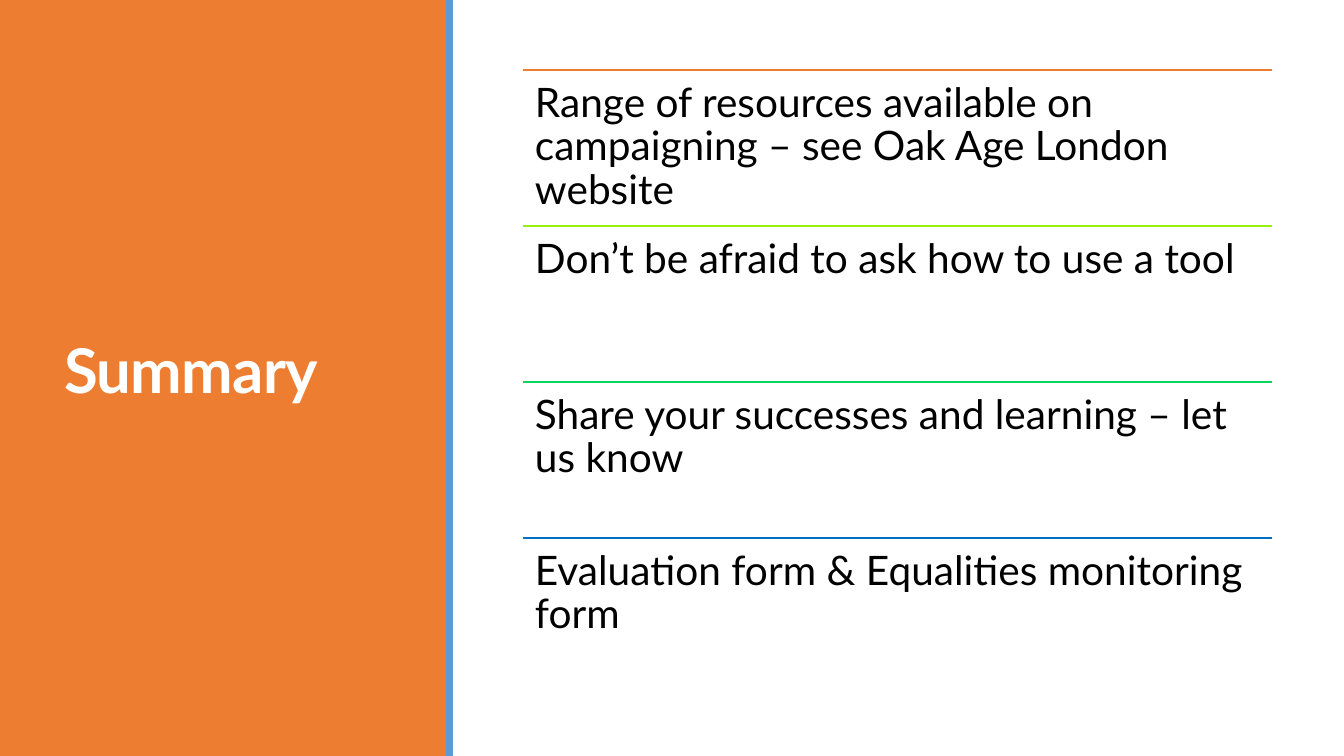
from dataclasses import dataclass

from pptx import Presentation
from pptx.dml.color import RGBColor
from pptx.enum.shapes import MSO_CONNECTOR, MSO_SHAPE
from pptx.enum.text import MSO_ANCHOR, MSO_AUTO_SIZE, PP_ALIGN
from pptx.oxml.ns import qn
from pptx.util import Pt

RECT = MSO_SHAPE.RECTANGLE
STRAIGHT = MSO_CONNECTOR.STRAIGHT
MIDDLE, TOP = MSO_ANCHOR.MIDDLE, MSO_ANCHOR.TOP
LEFT = PP_ALIGN.LEFT
NO_FIT = MSO_AUTO_SIZE.NONE

TITLE = "Summary"
POINTS = [
    ("Range of resources available on campaigning – see Oak Age London website", "ED7D31"),
    ("Don’t be afraid to ask how to use a tool", "94F10E"),
    ("Share your successes and learning – let us know", "06D95D"),
    ("Evaluation form & Equalities monitoring form", "0070C0"),
]


@dataclass(frozen=True)
class Theme:
    font: str = "Lato"
    panel: str = "ED7D31"
    stripe: str = "5B9BD5"
    title: str = "FFFFFF"
    text: str = "000000"
    title_size: int = 44
    text_size: int = 29
    rule_width: float = 1.25


THEME = Theme()
SLIDE_W, SLIDE_H = 1344, 756
LIST_X, LIST_Y, LIST_W, ROW_H = 523, 70, 749, 156
INSET = 12


def px(n):
    return round(n * 914400 / 100.8)


def box(*lengths):
    return [px(n) for n in lengths]


def add_block(slide, x, y, w, h, color):
    sp = slide.shapes.add_shape(RECT, *box(x, y, w, h))
    sp.shadow.inherit = False
    sp.fill.solid()
    sp.fill.fore_color.rgb = RGBColor.from_string(color)
    sp.line.fill.background()


def add_rule(slide, y, color):
    line = slide.shapes.add_connector(STRAIGHT, *box(LIST_X, y, LIST_X + LIST_W, y))
    line.line.color.rgb = RGBColor.from_string(color)
    line.line.width = Pt(THEME.rule_width)
    sp_pr = line._element.spPr
    sp_pr.append(sp_pr.makeelement(qn("a:effectLst"), {}))


def write(tf, text, size, color, spacing, anchor, bold=False):
    tf.word_wrap = True
    tf.auto_size = NO_FIT
    tf.vertical_anchor = anchor
    p = tf.paragraphs[0]
    p.alignment = LEFT
    p.line_spacing = spacing
    r = p.add_run()
    r.text = text
    p.font.name = THEME.font
    p.font.size = Pt(size)
    p.font.bold = bold
    p.font.color.rgb = RGBColor.from_string(color)
    return r


def add_title(slide):
    title = slide.shapes.title
    title.left, title.top, title.width, title.height = box(54, 57, 340, 636)
    r = write(title.text_frame, TITLE, THEME.title_size, THEME.title, 0.85, MIDDLE, True)
    r._r.get_or_add_rPr().set("spc", "-50")
    slide.shapes._spTree.append(title._element)  # bring in front of the panel


def add_point(slide, y, text):
    sp = slide.shapes.add_textbox(*box(LIST_X, y, LIST_W, ROW_H))
    tf = sp.text_frame
    tf.margin_left = tf.margin_top = tf.margin_right = tf.margin_bottom = px(INSET)
    write(tf, text, THEME.text_size, THEME.text, 0.9, TOP)


def main():
    prs = Presentation()
    prs.slide_width, prs.slide_height = box(SLIDE_W, SLIDE_H)
    slide = prs.slides.add_slide(prs.slide_layouts.get_by_name("Title Only"))
    add_block(slide, 0, 0, 447, SLIDE_H, THEME.panel)
    add_title(slide)
    add_block(slide, 446, 0, 7, SLIDE_H, THEME.stripe)
    for i, (text, color) in enumerate(POINTS):
        y = LIST_Y + i * ROW_H
        add_rule(slide, y, color)
        add_point(slide, y, text)
    prs.save("out.pptx")


if __name__ == "__main__":
    main()
